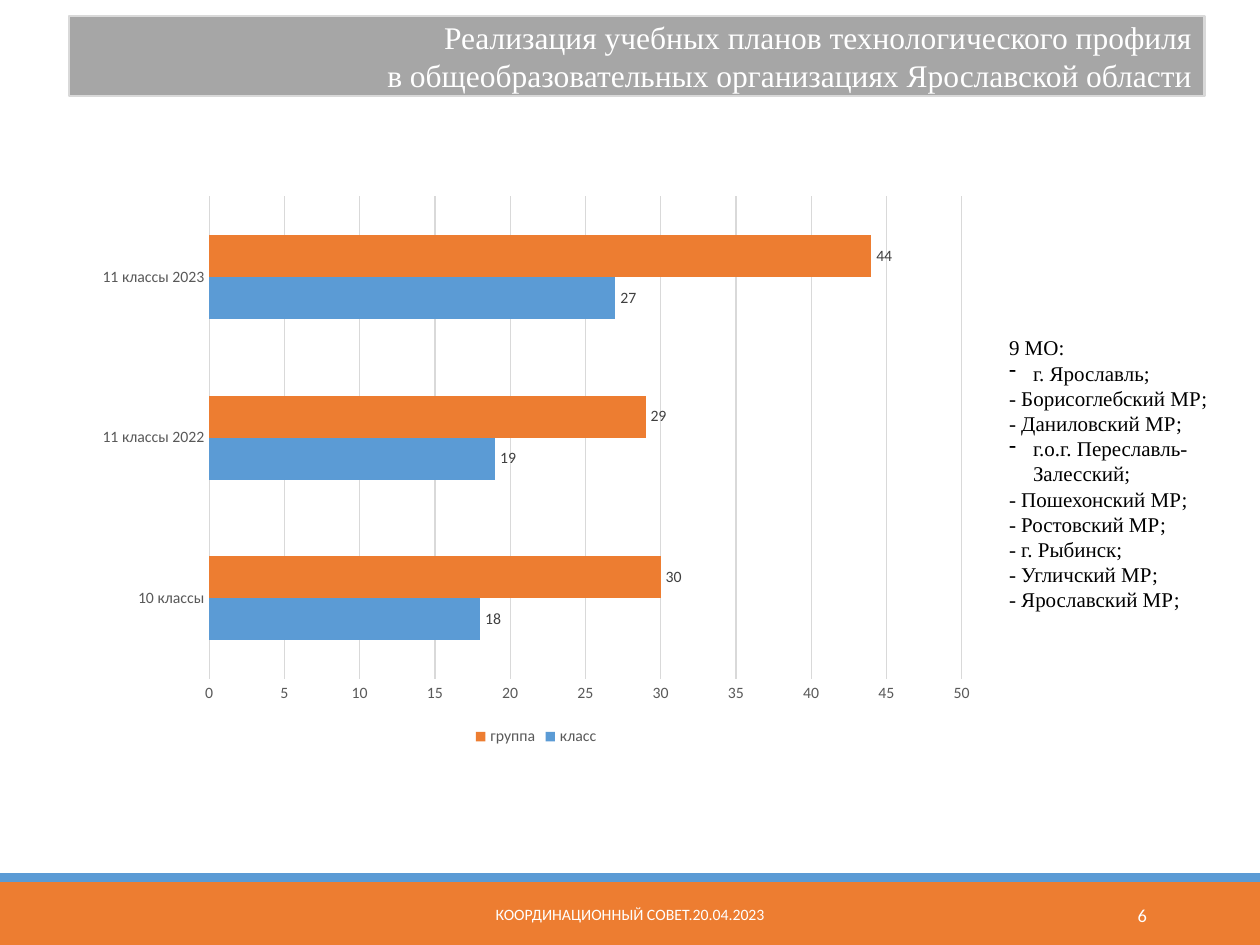
import pptx
import pptx.chart.data
import pptx.dml.color
import pptx.enum.chart
import pptx.enum.shapes
import pptx.enum.text
import pptx.oxml
import pptx.util
from pptx.util import Inches, Pt

RGBColor = pptx.dml.color.RGBColor
ORANGE = RGBColor(0xED, 0x7D, 0x31)
BLUE = RGBColor(0x5B, 0x9B, 0xD5)
GRAY = RGBColor(0xA6, 0xA6, 0xA6)
LIGHT_GRAY = RGBColor(0xD9, 0xD9, 0xD9)
AXIS_GRAY = RGBColor(0x59, 0x59, 0x59)
LABEL_GRAY = RGBColor(0x40, 0x40, 0x40)
WHITE = RGBColor(0xFF, 0xFF, 0xFF)
BLACK = RGBColor(0, 0, 0)

ALIGN = pptx.enum.text.PP_ALIGN
MIDDLE = pptx.enum.text.MSO_ANCHOR.MIDDLE

presentation = pptx.Presentation()
presentation.slide_width = Inches(10)
presentation.slide_height = Inches(7.5)
slide = presentation.slides.add_slide(presentation.slide_layouts[6])


def style_font(font, size, color, name="Calibri"):
    font.size = Pt(size)
    font.color.rgb = color
    font.name = name


def add_rectangle(left, top, width, height, color):
    shape = slide.shapes.add_shape(
        pptx.enum.shapes.MSO_SHAPE.RECTANGLE,
        Inches(left), Inches(top), Inches(width), Inches(height))
    shape.shadow.inherit = False
    shape.fill.solid()
    shape.fill.fore_color.rgb = color
    shape.line.fill.background()
    return shape


# Footer bands
add_rectangle(0, 7, 10, 0.5, ORANGE)
add_rectangle(0, 6.93, 10, 0.07, BLUE)

# List of municipalities
municipalities = [
    "9 МО:", "г. Ярославль;", "- Борисоглебский МР;", "- Даниловский МР;",
    "г.о.г. Переславль-Залесский;", "- Пошехонский МР;", "- Ростовский МР;",
    "- г. Рыбинск;", "- Угличский МР;", "- Ярославский МР;",
]
bulleted = {"г. Ярославль;", "г.о.г. Переславль-Залесский;"}
list_box = slide.shapes.add_textbox(Inches(7.91), Inches(2.61), Inches(1.89), Inches(2.53))
list_frame = list_box.text_frame
list_frame.word_wrap = True
list_frame.text = "\n".join(municipalities)
for paragraph in list_frame.paragraphs:
    style_font(paragraph.font, 12, BLACK, "Times New Roman")
    if paragraph.text in bulleted:
        properties = paragraph._p.get_or_add_pPr()
        properties.set("marL", str(Inches(0.19)))
        properties.set("indent", str(-Inches(0.19)))
        bullet = pptx.oxml.parse_xml(
            '<a:buChar xmlns:a="http://schemas.openxmlformats.org/drawingml/2006/main" char="-"/>')
        properties.insert(0, bullet)

# Title
title = add_rectangle(0.55, 0.13, 9.01, 0.63, GRAY)
title.line.color.rgb = LIGHT_GRAY
title.line.width = Pt(1.25)
title_frame = title.text_frame
title_frame.vertical_anchor = MIDDLE
title_frame.text = ("Реализация учебных планов технологического профиля\n"
                    "в общеобразовательных организациях Ярославской области")
for paragraph in title_frame.paragraphs:
    paragraph.alignment = ALIGN.RIGHT
    style_font(paragraph.font, 18, WHITE, "Times New Roman")

# Bar chart of classes and groups
chart_data = pptx.chart.data.CategoryChartData()
chart_data.categories = ["10 классы", "11 классы 2022", "11 классы 2023"]
chart_data.add_series("класс", [18, 19, 27])
chart_data.add_series("группа", [30, 29, 44])
chart = slide.shapes.add_chart(
    pptx.enum.chart.XL_CHART_TYPE.BAR_CLUSTERED,
    Inches(0.67), Inches(1.47), Inches(7.17), Inches(4.49), chart_data).chart
style_font(chart.font, 10, BLACK)
chart.has_title = False
chart.has_legend = True
chart.legend.position = pptx.enum.chart.XL_LEGEND_POSITION.BOTTOM
chart.legend.include_in_layout = False
style_font(chart.legend.font, 9, AXIS_GRAY)

for axis in (chart.category_axis, chart.value_axis):
    axis.major_tick_mark = pptx.enum.chart.XL_TICK_MARK.NONE
    axis.minor_tick_mark = pptx.enum.chart.XL_TICK_MARK.NONE
    style_font(axis.tick_labels.font, 9, AXIS_GRAY)
chart.value_axis.format.line.fill.background()
chart.value_axis.has_major_gridlines = True
for line in (chart.category_axis.format.line, chart.value_axis.major_gridlines.format.line):
    line.color.rgb = LIGHT_GRAY
    line.width = Pt(0.75)

plot = chart.plots[0]
plot.gap_width = 182
plot.overlap = 0
plot.vary_by_categories = False
for series, color in zip(plot.series, (BLUE, ORANGE)):
    series.format.fill.solid()
    series.format.fill.fore_color.rgb = color
    labels = series.data_labels
    labels.show_value = True
    labels.position = pptx.enum.chart.XL_LABEL_POSITION.OUTSIDE_END
    style_font(labels.font, 9, LABEL_GRAY)

# Footer text and slide number
for text, left, width, size, alignment in (
        ("КООРДИНАЦИОННЫЙ СОВЕТ.20.04.2023", 3.02, 3.96, 9, ALIGN.CENTER),
        ("6", 8.12, 1.08, 10.5, ALIGN.RIGHT)):
    footer = slide.shapes.add_textbox(Inches(left), Inches(7.06), Inches(width), Inches(0.4))
    footer.text_frame.word_wrap = True
    footer.text_frame.vertical_anchor = MIDDLE
    paragraph = footer.text_frame.paragraphs[0]
    paragraph.text = text
    paragraph.alignment = alignment
    style_font(paragraph.font, size, WHITE)

presentation.save("out.pptx")
